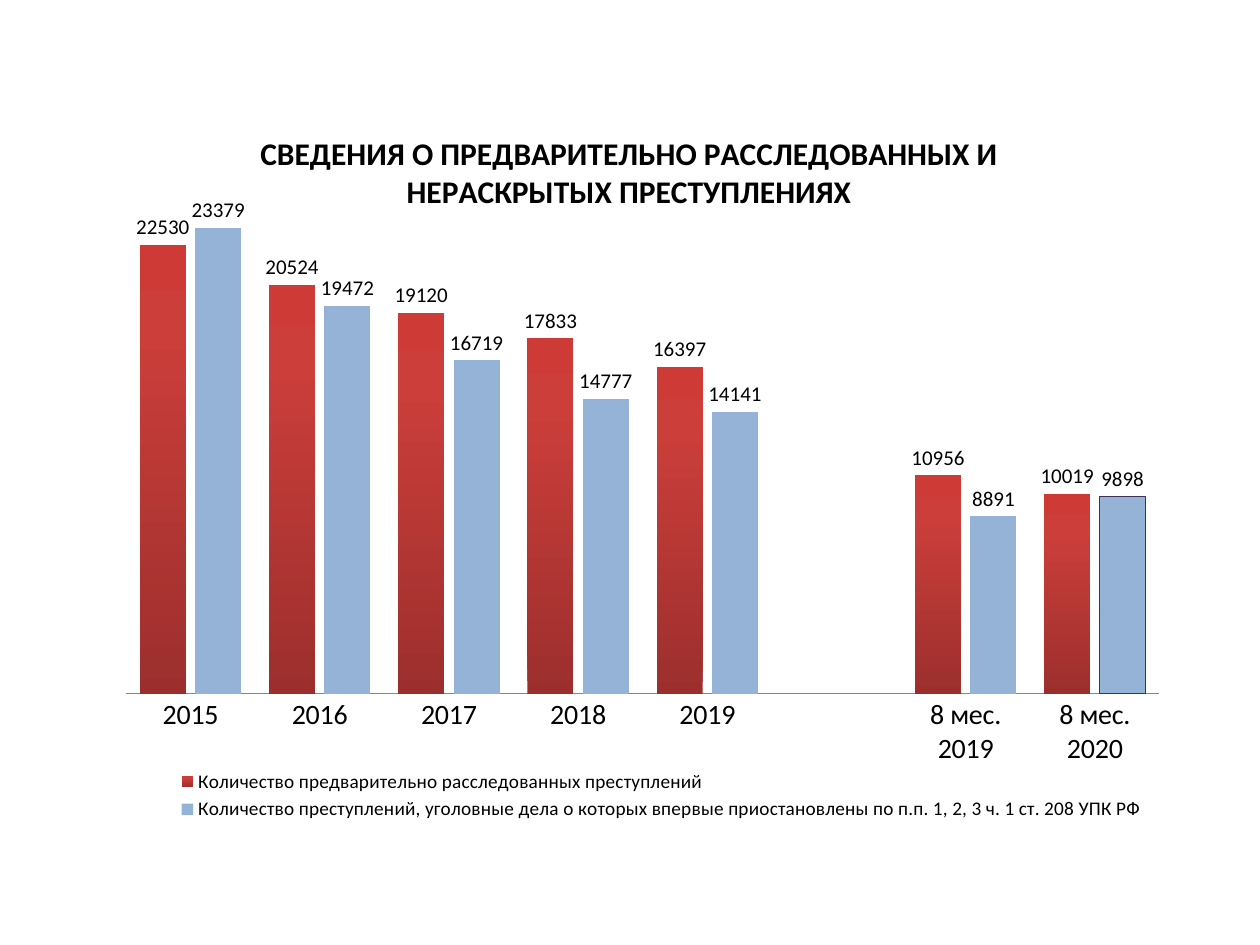
from copy import deepcopy
from dataclasses import dataclass

from pptx import Presentation
from pptx.chart.data import CategoryChartData
from pptx.dml.color import RGBColor
from pptx.enum.chart import (XL_CHART_TYPE, XL_LABEL_POSITION,
                             XL_LEGEND_POSITION, XL_TICK_MARK)
from pptx.oxml import parse_xml
from pptx.oxml.ns import nsdecls
from pptx.util import Inches, Pt

COLUMN = XL_CHART_TYPE.COLUMN_CLUSTERED
ABOVE = XL_LABEL_POSITION.OUTSIDE_END
BOTTOM = XL_LEGEND_POSITION.BOTTOM
NO_TICK = XL_TICK_MARK.NONE
FACE = "Calibri"
BLACK = "000000"
TITLE = "СВЕДЕНИЯ О ПРЕДВАРИТЕЛЬНО РАССЛЕДОВАННЫХ И НЕРАСКРЫТЫХ ПРЕСТУПЛЕНИЯХ"
YEARS = ["2015", "2016", "2017", "2018", "2019", "", "8 мес. 2019", "8 мес. 2020"]


@dataclass
class Group:
    """One row of columns; each stop is a gradient place and a colour."""
    name: str
    vals: list
    stops: list


GROUPS = [
    Group("Количество предварительно расследованных преступлений",
          [22530, 20524, 19120, 17833, 16397, None, 10956, 10019],
          [(0, "9C2F2D"), (0.8, "CB3E3A"), (1, "CE3B37")]),
    Group("Количество преступлений, уголовные дела о которых впервые "
          "приостановлены по п.п. 1, 2, 3 ч. 1 ст. 208 УПК РФ",
          [23379, 19472, 16719, 14777, 14141, None, 8891, 9898],
          [(0, "95B3D7")]),
]


def paint(code: str) -> RGBColor:
    """Turn a hex string into a colour."""
    return RGBColor.from_string(code)


def style(font, size: float, bold: bool = False) -> None:
    """Set face, size, weight and colour of a font."""
    font.name, font.size, font.bold = FACE, Pt(size), bold
    font.color.rgb = paint(BLACK)


def place(host, anchor, inner: bool = False, **box: float) -> None:
    """Fix a chart part at fractions of the chart, ahead of the anchor."""
    for old in host.xpath("c:layout"):
        host.remove(old)
    target = '<c:layoutTarget val="inner"/>' if inner else ""
    modes = "".join(f'<c:{key}Mode val="edge"/>' for key in "xy")
    sizes = "".join(f'<c:{key} val="{val}"/>' for key, val in box.items())
    anchor.addprevious(parse_xml(
        f'<c:layout {nsdecls("c")}><c:manualLayout>{target}{modes}{sizes}'
        "</c:manualLayout></c:layout>"))


def fill_bars(row, group: Group) -> None:
    """Give a series its plain or graded fill and its value labels."""
    fill = row.format.fill
    row.invert_if_negative = False
    if len(group.stops) == 1:
        fill.solid()
        fill.fore_color.rgb = paint(group.stops[0][1])
    else:
        fill.gradient()
        fill.gradient_angle = 90
        stops = row._element.xpath("c:spPr/a:gradFill/a:gsLst")[0]
        while len(stops) < len(group.stops):
            stops.append(deepcopy(stops[-1]))
        for stop, (pos, code) in zip(fill.gradient_stops, group.stops):
            stop.position = pos
            stop.color.rgb = paint(code)
    labels = row.data_labels
    labels.show_value = True
    labels.position = ABOVE
    style(labels.font, 12)


def add_bars(slide) -> None:
    """Draw the column chart with title, axes and legend."""
    data = CategoryChartData()
    data.categories = YEARS
    for group in GROUPS:
        data.add_series(group.name, group.vals)
    chart = slide.shapes.add_chart(
        COLUMN, Inches(0.83), Inches(0.76), Inches(8.51), Inches(5.91), data).chart
    style(chart.font, 18)

    title = chart.chart_title
    run = title.text_frame.paragraphs[0].add_run()
    run.text = TITLE
    style(run.font, 18, True)
    head = title._element
    place(head, head.xpath("c:overlay")[0], x=0.14, y=0.04)

    plot = chart.plots[0]
    plot.gap_width, plot.overlap = 60, -20
    plot.vary_by_categories = False
    for row, group in zip(plot.series, GROUPS):
        fill_bars(row, group)
    last = plot.series[1].points[7].format
    last.fill.solid()
    last.fill.fore_color.rgb = paint("95B3D7")
    last.line.color.rgb = paint("403152")
    last.line.width = Pt(0.75)
    bars = plot._element
    place(bars.getparent(), bars, True, x=0.02, y=0.134, w=0.964, h=0.669)

    base = chart.category_axis
    base.major_tick_mark = base.minor_tick_mark = NO_TICK
    base.format.line.color.rgb = paint("868686")
    style(base.tick_labels.font, 16)
    scale = chart.value_axis
    scale.minimum_scale, scale.maximum_scale = 0, 25000
    scale.has_major_gridlines = False
    scale.visible = False

    chart.has_legend = True
    legend = chart.legend
    legend.position = BOTTOM
    legend.include_in_layout = False
    style(legend.font, 11)
    key = legend._element
    place(key, key.xpath("c:overlay")[0], x=0.06, y=0.9, w=0.92, h=0.08)


def main() -> None:
    """Build the slide and save it."""
    deck = Presentation()
    deck.slide_width, deck.slide_height = Inches(10), Inches(7.5)
    add_bars(deck.slides.add_slide(deck.slide_layouts[6]))
    deck.save("out.pptx")


if __name__ == "__main__":
    main()
